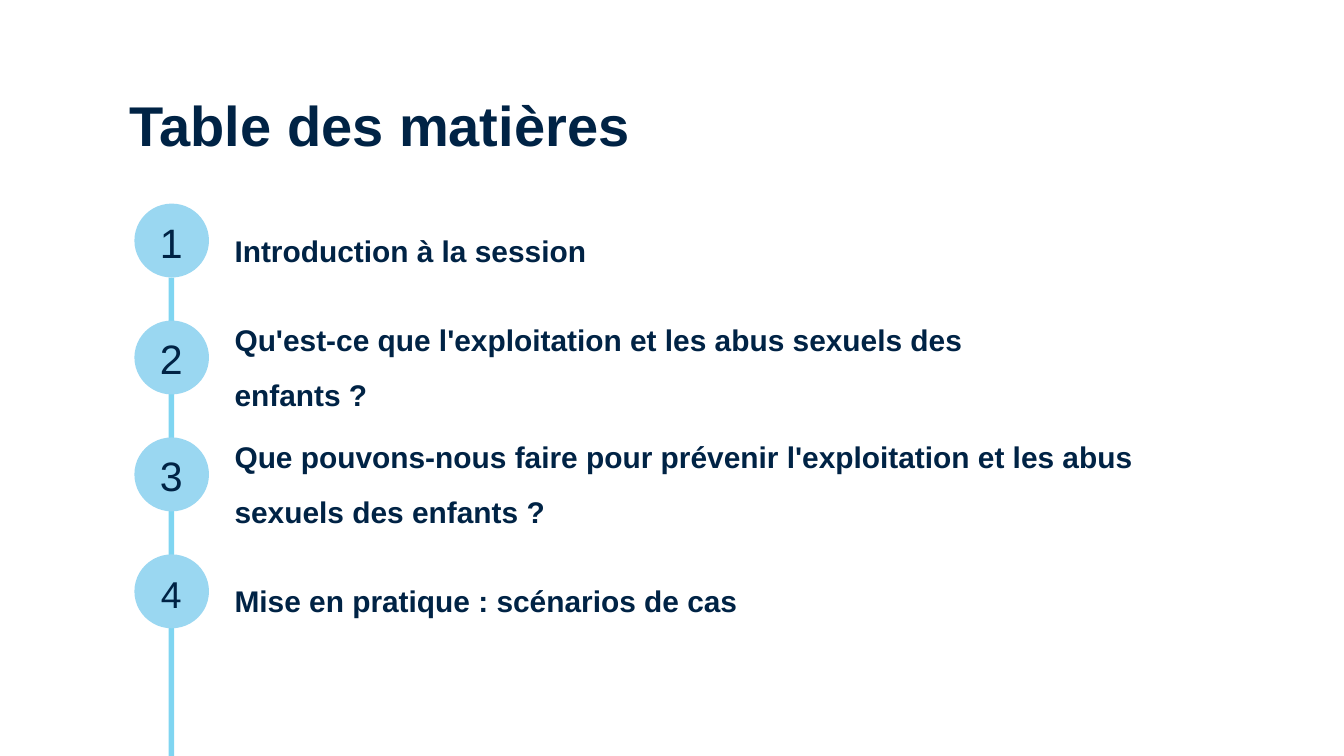
import pptx
import pptx.dml.color
import pptx.enum.shapes
import pptx.enum.text
import pptx.util
from lxml import etree
from pptx.oxml.ns import qn

Inches = pptx.util.Inches
ALIGN = pptx.enum.text.PP_ALIGN
ANCHOR = pptx.enum.text.MSO_ANCHOR
NAVY, PALE_BLUE, LINE_BLUE = "002345", "9AD7F1", "00ADE4"


def color(value):
    return pptx.dml.color.RGBColor.from_string(value)


def add_text(left, top, width, height, text, size, bold=True, spacing=None,
             align=ALIGN.LEFT, anchor=ANCHOR.MIDDLE, margins=(0.06, 0.06)):
    """Add a one-paragraph text box; margins are (horizontal, vertical) in inches."""
    box = slide.shapes.add_textbox(Inches(left), Inches(top), Inches(width), Inches(height))
    frame = box.text_frame
    frame.word_wrap = True
    frame.vertical_anchor = anchor
    frame.margin_left = frame.margin_right = Inches(margins[0])
    frame.margin_top = frame.margin_bottom = Inches(margins[1])
    para = frame.paragraphs[0]
    para.alignment = align
    if spacing:
        para.line_spacing = spacing
    span = para.add_run()
    span.text = text
    span.font.name = "Arial"
    span.font.size = pptx.util.Pt(size)
    span.font.bold = bold
    span.font.color.rgb = color(NAVY)


deck = pptx.Presentation()
deck.slide_width, deck.slide_height = Inches(20), Inches(11.25)
slide = deck.slides.add_slide(deck.slide_layouts[6])

# Half-transparent timeline running off the bottom edge
timeline = slide.shapes.add_connector(
    pptx.enum.shapes.MSO_CONNECTOR.STRAIGHT,
    Inches(2.55), Inches(4.13), Inches(2.55), Inches(11.25))
timeline.line.width = pptx.util.Pt(6)
timeline.line.color.rgb = color(LINE_BLUE)
properties = timeline._element.spPr
line_color = next(properties.iter(qn("a:srgbClr")))
etree.SubElement(line_color, qn("a:alpha"), val="49000")
etree.SubElement(properties, qn("a:effectLst"))

add_text(1.83, 1.3, 8.5, 1.11, "Table des matières", 60,
         anchor=ANCHOR.TOP, margins=(0.1, 0.05))

# Heading, heading width, number size, number line spacing
sections = [
    ("Introduction à la session", 11.05, 44, 0.68),
    ("Qu'est-ce que l'exploitation et les abus sexuels des enfants ?", 11.05, 44, 0.68),
    ("Que pouvons-nous faire pour prévenir l'exploitation et les abus sexuels des enfants ?",
     13.65, 44, 0.68),
    ("Mise en pratique : scénarios de cas", 11.05, 40, 0.75),
]
FIRST_TOP, STEP = 3.03, 1.74
for index, (heading, width, number_size, number_spacing) in enumerate(sections):
    top = FIRST_TOP + index * STEP
    add_text(3.43, top, width, 1.1, heading, 32, spacing=1.53)
    circle = slide.shapes.add_shape(
        pptx.enum.shapes.MSO_SHAPE.OVAL, Inches(2), Inches(top), Inches(1.11), Inches(1.1))
    circle.shadow.inherit = False
    circle.fill.solid()
    circle.fill.fore_color.rgb = color(PALE_BLUE)
    circle.line.fill.background()
    add_text(2.11, top + 0.27, 0.88, 0.78, str(index + 1), number_size, bold=False,
             spacing=number_spacing, align=ALIGN.CENTER)

deck.save("out.pptx")
